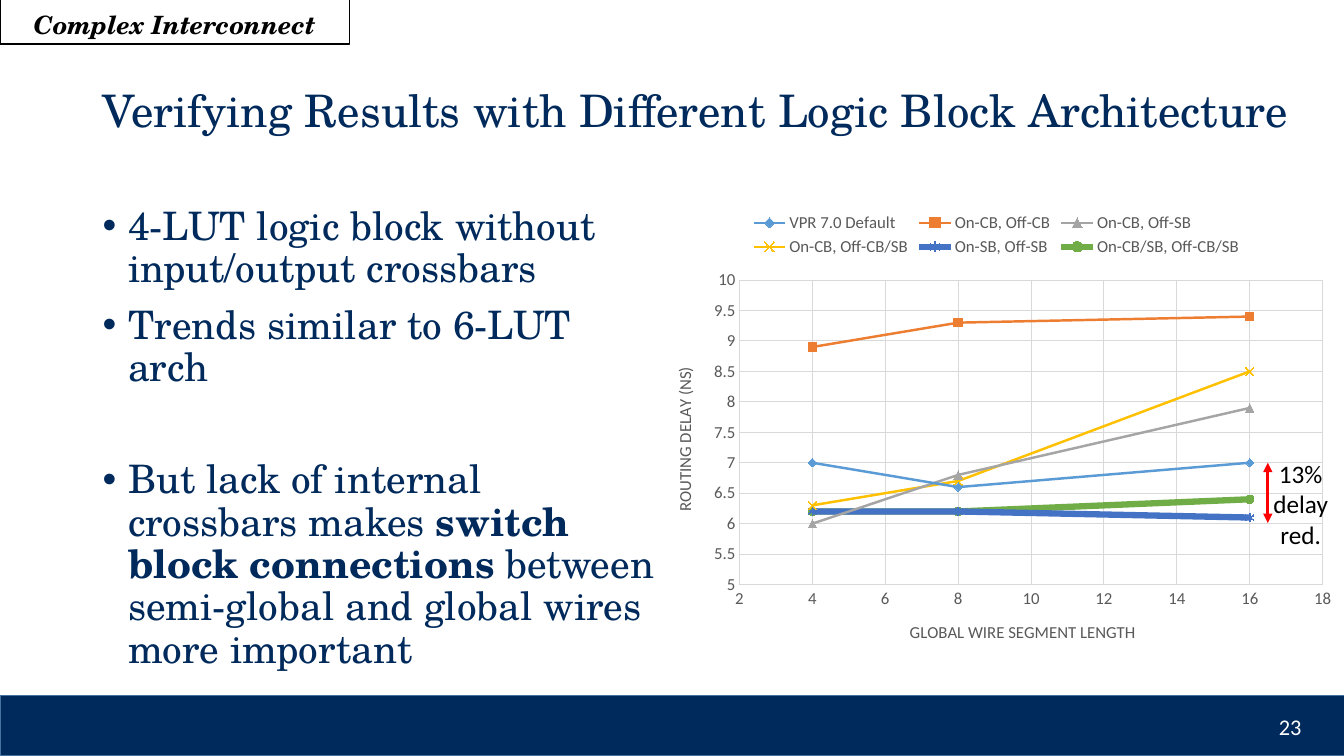
"""Builds the slide on verifying routing results with a different logic block architecture."""
from lxml.etree import SubElement
from pptx import Presentation
from pptx.chart.data import XyChartData
from pptx.dml.color import RGBColor
from pptx.enum.chart import XL_CHART_TYPE, XL_LEGEND_POSITION, XL_TICK_MARK
from pptx.enum.chart import XL_MARKER_STYLE as Marker
from pptx.enum.shapes import MSO_CONNECTOR, MSO_SHAPE
from pptx.enum.text import MSO_ANCHOR as Anchor, PP_ALIGN as Align
from pptx.oxml.ns import qn
from pptx.util import Cm, Pt

NAVY = RGBColor(0x00, 0x2A, 0x5C)
BAND_EDGE = RGBColor(0x43, 0x73, 0x9E)
BLACK = RGBColor(0x00, 0x00, 0x00)
WHITE = RGBColor(0xFF, 0xFF, 0xFF)
RED = RGBColor(0xFF, 0x00, 0x00)
AXIS_TEXT = RGBColor(0x59, 0x59, 0x59)
GRID = RGBColor(0xD9, 0xD9, 0xD9)
BLUE = RGBColor(0x5B, 0x9B, 0xD5)
ORANGE = RGBColor(0xED, 0x7D, 0x31)
GREY = RGBColor(0xA5, 0xA5, 0xA5)
YELLOW = RGBColor(0xFF, 0xC0, 0x00)
INDIGO = RGBColor(0x44, 0x72, 0xC4)
GREEN = RGBColor(0x70, 0xAD, 0x47)
SERIF, SANS = "TeX Gyre Schola", "Calibri"

deck = Presentation()
deck.slide_width, deck.slide_height = Cm(33.87), Cm(19.05)
slide = deck.slides.add_slide(deck.slide_layouts[6])
shapes = slide.shapes


def add_text_box(left, top, width, height, anchor=Anchor.TOP):
    """Adds a wrapping text box, in centimetres, and returns its text frame."""
    frame = shapes.add_textbox(Cm(left), Cm(top), Cm(width), Cm(height)).text_frame
    frame.word_wrap = True
    frame.vertical_anchor = anchor
    return frame


def add_run(paragraph, text, size, font, color, bold=False, italic=False):
    """Adds one formatted run to a paragraph."""
    run = paragraph.add_run()
    run.text = text
    run.font.size, run.font.name = Pt(size), font
    run.font.bold, run.font.italic = bold, italic
    run.font.color.rgb = color


footer = shapes.add_shape(MSO_SHAPE.RECTANGLE, 0, Cm(17.53), Cm(33.91), Cm(1.52))
footer.shadow.inherit = False
footer.fill.solid()
footer.fill.fore_color.rgb = NAVY
footer.line.color.rgb = BAND_EDGE
footer.line.width = Pt(1)

title = add_text_box(2.34, 1.02, 30.45, 3.68, Anchor.MIDDLE).paragraphs[0]
title.line_spacing = 0.9
add_run(title, "Verifying Results with Different Logic Block Architecture", 32, SERIF, NAVY)

points = [
    (0, [("4-LUT logic block without input/output crossbars", False)]),
    (10, [("Trends similar to 6-LUT arch", False)]),
    (50, [("But lack of internal crossbars makes ", False),
          ("switch block connections ", True),
          ("between semi-global and global wires more important", False)]),
]
body = add_text_box(2.34, 5.08, 14.43, 12.09)
for index, (gap, pieces) in enumerate(points):
    point = body.add_paragraph() if index else body.paragraphs[0]
    point.line_spacing = 0.9
    if gap:
        point.space_before = Pt(gap)
    properties = point._p.get_or_add_pPr()
    properties.set("marL", str(Cm(0.64)))
    properties.set("indent", str(-Cm(0.64)))
    SubElement(properties, qn("a:buFont"), typeface="Arial")
    SubElement(properties, qn("a:buChar"), char="•")
    for text, bold in pieces:
        add_run(point, text, 28, SERIF, NAVY, bold)

page = add_text_box(25.43, 17.81, 7.62, 1.02, Anchor.MIDDLE).paragraphs[0]
page.alignment = Align.RIGHT
add_run(page, "23", 16, SANS, WHITE)

section = add_text_box(0.6, 0.1, 10.3, 1.02).paragraphs[0]
add_run(section, "Complex Interconnect", 18, SERIF, BLACK, True, True)
section_frame = shapes.add_shape(MSO_SHAPE.RECTANGLE, 0, Cm(-0.03), Cm(8.81), Cm(1.14))
section_frame.shadow.inherit = False
section_frame.fill.background()
section_frame.line.color.rgb = BLACK
section_frame.line.width = Pt(1)

segment_lengths = (4, 8, 16)
architectures = [
    ("VPR 7.0 Default", (7, 6.6, 7), BLUE, 1.75, Marker.DIAMOND, True),
    ("On-CB, Off-CB", (8.9, 9.3, 9.4), ORANGE, 1.75, Marker.SQUARE, True),
    ("On-CB, Off-SB", (6, 6.8, 7.9), GREY, 1.75, Marker.TRIANGLE, True),
    ("On-CB, Off-CB/SB", (6.3, 6.7, 8.5), YELLOW, 1.75, Marker.X, False),
    ("On-SB, Off-SB", (6.2, 6.2, 6.1), INDIGO, 4.5, Marker.STAR, False),
    ("On-CB/SB, Off-CB/SB", (6.2, 6.2, 6.4), GREEN, 4.5, Marker.CIRCLE, True),
]
delays = XyChartData()
for name, values, *_ in architectures:
    series = delays.add_series(name)
    for length, delay in zip(segment_lengths, values):
        series.add_data_point(length, delay)

chart = shapes.add_chart(XL_CHART_TYPE.XY_SCATTER_LINES, Cm(16.36), Cm(5.08),
                         Cm(17.5), Cm(11.63), delays).chart
chart.font.size, chart.font.name = Pt(10), SANS
chart.font.color.rgb = BLACK
chart.has_title = False
chart.has_legend = True
legend = chart.legend
legend.position = XL_LEGEND_POSITION.TOP
legend.include_in_layout = False
legend.font.size, legend.font.name = Pt(12), SANS
legend.font.color.rgb = AXIS_TEXT

plot = chart.plots[0]
plot.vary_by_categories = False
for series, (_, _, color, width, style, filled) in zip(plot.series, architectures):
    series.smooth = False
    series.format.line.color.rgb = color
    series.format.line.width = Pt(width)
    marker = series.marker
    marker.style, marker.size = style, 6
    marker.format.line.color.rgb = color
    if filled:
        marker.format.fill.solid()
        marker.format.fill.fore_color.rgb = color
    else:
        marker.format.fill.background()

axes = [
    (chart.category_axis, "GLOBAL WIRE SEGMENT LENGTH", 2, 18, 2),
    (chart.value_axis, "ROUTING DELAY (NS)", 5, 10, 0.5),
]
for axis, caption, low, high, step in axes:
    axis.minimum_scale, axis.maximum_scale, axis.major_unit = low, high, step
    axis.major_tick_mark = axis.minor_tick_mark = XL_TICK_MARK.NONE
    axis.has_major_gridlines = True
    for line in (axis.format.line, axis.major_gridlines.format.line):
        line.color.rgb = GRID
        line.width = Pt(0.75)
    labels = axis.tick_labels
    labels.number_format, labels.number_format_is_linked = "General", False
    labels.font.size, labels.font.name = Pt(12), SANS
    labels.font.color.rgb = AXIS_TEXT
    add_run(axis.axis_title.text_frame.paragraphs[0], caption, 12, SANS, AXIS_TEXT)

plot_area = chart._chartSpace.chart.plotArea
for old_layout in plot_area.findall(qn("c:layout")):
    plot_area.remove(old_layout)
layout = SubElement(plot_area, qn("c:layout"))
plot_area.insert(0, layout)
manual = SubElement(layout, qn("c:manualLayout"))
for tag, value in [("layoutTarget", "inner"), ("xMode", "edge"), ("yMode", "edge"),
                   ("x", "0.13"), ("y", "0.17"), ("w", "0.84"), ("h", "0.66")]:
    SubElement(manual, qn(f"c:{tag}"), val=value)

reduction = shapes.add_connector(MSO_CONNECTOR.STRAIGHT,
                                 Cm(31.95), Cm(13.18), Cm(31.95), Cm(11.66))
reduction.line.color.rgb = RED
reduction.line.width = Pt(2.25)
for end in ("headEnd", "tailEnd"):
    SubElement(reduction.line._get_or_add_ln(), qn(f"a:{end}"), type="triangle")
SubElement(reduction._element.spPr, qn("a:effectLst"))

callout = add_text_box(31.7, 11.43, 2.16, 2.57)
for index, word in enumerate(("13%", "delay", "red.")):
    line = callout.add_paragraph() if index else callout.paragraphs[0]
    line.alignment = Align.CENTER
    add_run(line, word, 18, SANS, BLACK)

deck.save("out.pptx")
